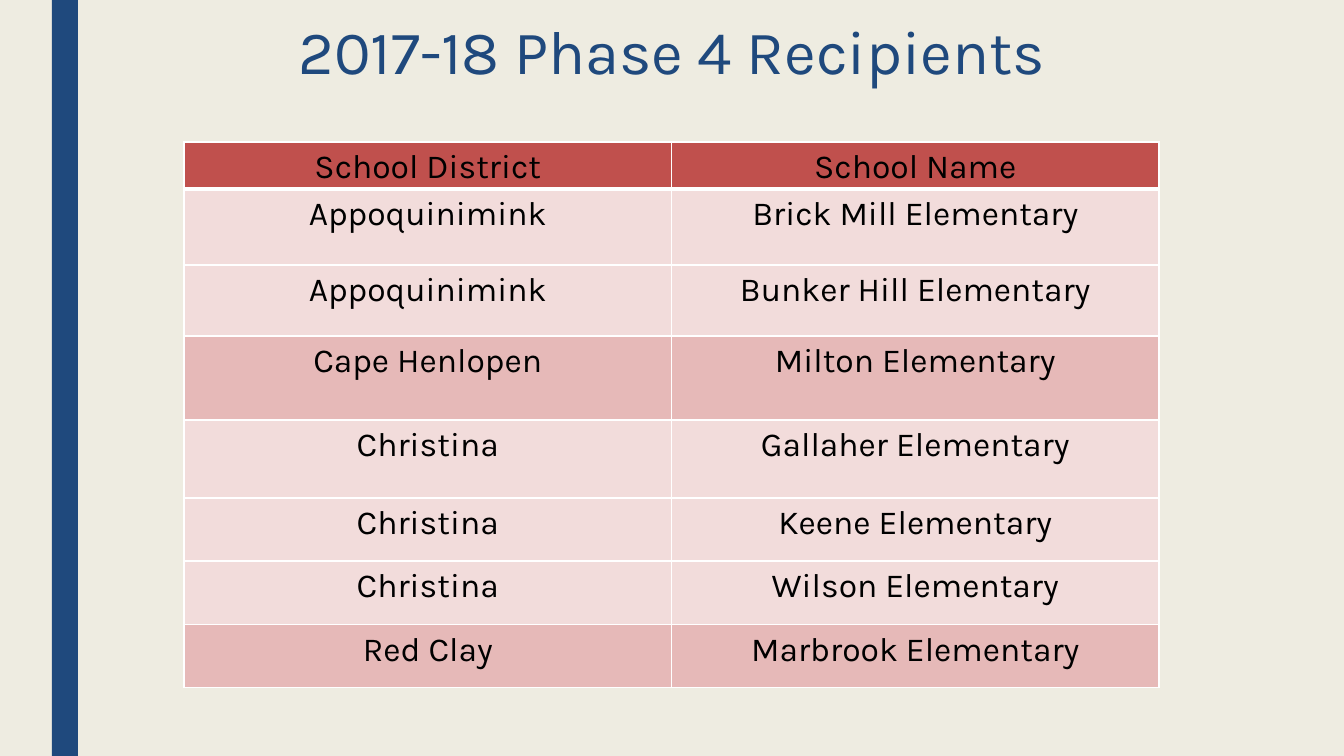
"""Builds the slide listing the 2017-18 Phase 4 recipients."""
from dataclasses import dataclass
from itertools import groupby

from lxml import etree
from pptx import Presentation
from pptx.dml.color import RGBColor
from pptx.enum.shapes import MSO_SHAPE
from pptx.enum.text import MSO_ANCHOR, MSO_AUTO_SIZE, PP_ALIGN
from pptx.oxml.ns import qn
from pptx.util import Pt

RECTANGLE = MSO_SHAPE.RECTANGLE
CENTER = PP_ALIGN.CENTER
TOP = MSO_ANCHOR.TOP
NO_AUTOFIT = MSO_AUTO_SIZE.NONE
EMU_PER_PX = 914400 / 100.8
TITLE_ONLY = 5

HEADINGS = ("School District", "School Name")
RECIPIENTS = (
    ("Appoquinimink", "Brick Mill Elementary"),
    ("Appoquinimink", "Bunker Hill Elementary"),
    ("Cape Henlopen", "Milton Elementary"),
    ("Christina", "Gallaher Elementary"),
    ("Christina", "Keene Elementary"),
    ("Christina", "Wilson Elementary"),
    ("Red Clay", "Marbrook Elementary"),
)
ROW_HEIGHTS = (47, 76, 71, 84, 78, 63, 64, 63)


@dataclass(frozen=True)
class Theme:
    """Colours, font and type sizes of the slide."""
    font: str = "Karla"
    background: str = "EEECE1"
    navy: str = "1F497D"
    text: str = "000000"
    border: str = "FFFFFF"
    header: str = "C0504D"
    bands: tuple = ("F2DCDB", "E6B9B8")
    title_size: int = 44
    cell_size: int = 24


THEME = Theme()


def px(length):
    """Turn pixels into EMU."""
    return round(length * EMU_PER_PX)


def paint(fill, color):
    """Give a fill one solid colour."""
    fill.solid()
    fill.fore_color.rgb = RGBColor.from_string(color)


def style_paragraph(paragraph, size, color, spacing):
    """Centre a paragraph and set its font and line spacing."""
    paragraph.alignment = CENTER
    paragraph.line_spacing = spacing
    paragraph.font.name = THEME.font
    paragraph.font.size = Pt(size)
    paragraph.font.bold = False
    paragraph.font.color.rgb = RGBColor.from_string(color)


def add_side_bar(slide):
    """Add the full-height bar at the left."""
    bar = slide.shapes.add_shape(RECTANGLE, px(52), 0, px(26), px(756))
    bar.shadow.inherit = False
    paint(bar.fill, THEME.navy)
    bar.line.fill.background()


def fill_title(slide, wording):
    """Place and format the slide title."""
    title = slide.shapes.title
    title.left, title.top, title.width, title.height = map(px, (93, 17, 1159, 146))
    frame = title.text_frame
    frame.text = wording
    frame.vertical_anchor = TOP
    frame.auto_size = NO_AUTOFIT
    style_paragraph(frame.paragraphs[0], THEME.title_size, THEME.navy, 0.89)


def add_borders(cell, bottom_width):
    """Draw the four borders of a cell ahead of its fill."""
    properties = cell._tc.get_or_add_tcPr()
    widths = {"a:lnL": 1, "a:lnR": 1, "a:lnT": 1, "a:lnB": bottom_width}
    for position, (side, width) in enumerate(widths.items()):
        line = etree.Element(qn(side), w=str(Pt(width)))
        solid = etree.SubElement(line, qn("a:solidFill"))
        etree.SubElement(solid, qn("a:srgbClr"), val=THEME.border)
        properties.insert(position, line)


def fill_cell(cell, wording, color, bottom_width):
    """Write and format one table cell."""
    cell.text = wording
    cell.margin_left = cell.margin_right = px(5)
    cell.margin_top = cell.margin_bottom = 0
    cell.vertical_anchor = TOP
    style_paragraph(cell.text_frame.paragraphs[0], THEME.cell_size, THEME.text, 1.15)
    paint(cell.fill, color)
    add_borders(cell, bottom_width)


def district_colors():
    """Return a row colour per recipient, alternating by district."""
    districts = groupby(RECIPIENTS, key=lambda recipient: recipient[0])
    return [THEME.bands[index % 2]
            for index, (_, schools) in enumerate(districts) for _ in schools]


def add_recipients(slide):
    """Add the table of districts and schools."""
    frame = slide.shapes.add_table(
        len(ROW_HEIGHTS), len(HEADINGS),
        px(184), px(142), px(975), px(sum(ROW_HEIGHTS)))
    table = frame.table
    table.horz_banding = False
    contents = (HEADINGS, *RECIPIENTS)
    colors = [THEME.header, *district_colors()]
    for index, (wordings, color) in enumerate(zip(contents, colors)):
        table.rows[index].height = px(ROW_HEIGHTS[index])
        bottom_width = 3 if index == 0 else 1
        for column, wording in enumerate(wordings):
            fill_cell(table.cell(index, column), wording, color, bottom_width)


def main():
    """Build and save the presentation."""
    presentation = Presentation()
    presentation.slide_width = px(1344)
    presentation.slide_height = px(756)
    slide = presentation.slides.add_slide(presentation.slide_layouts[TITLE_ONLY])
    paint(slide.background.fill, THEME.background)
    add_side_bar(slide)
    fill_title(slide, "2017-18 Phase 4 Recipients")
    add_recipients(slide)
    presentation.save("out.pptx")


if __name__ == "__main__":
    main()
